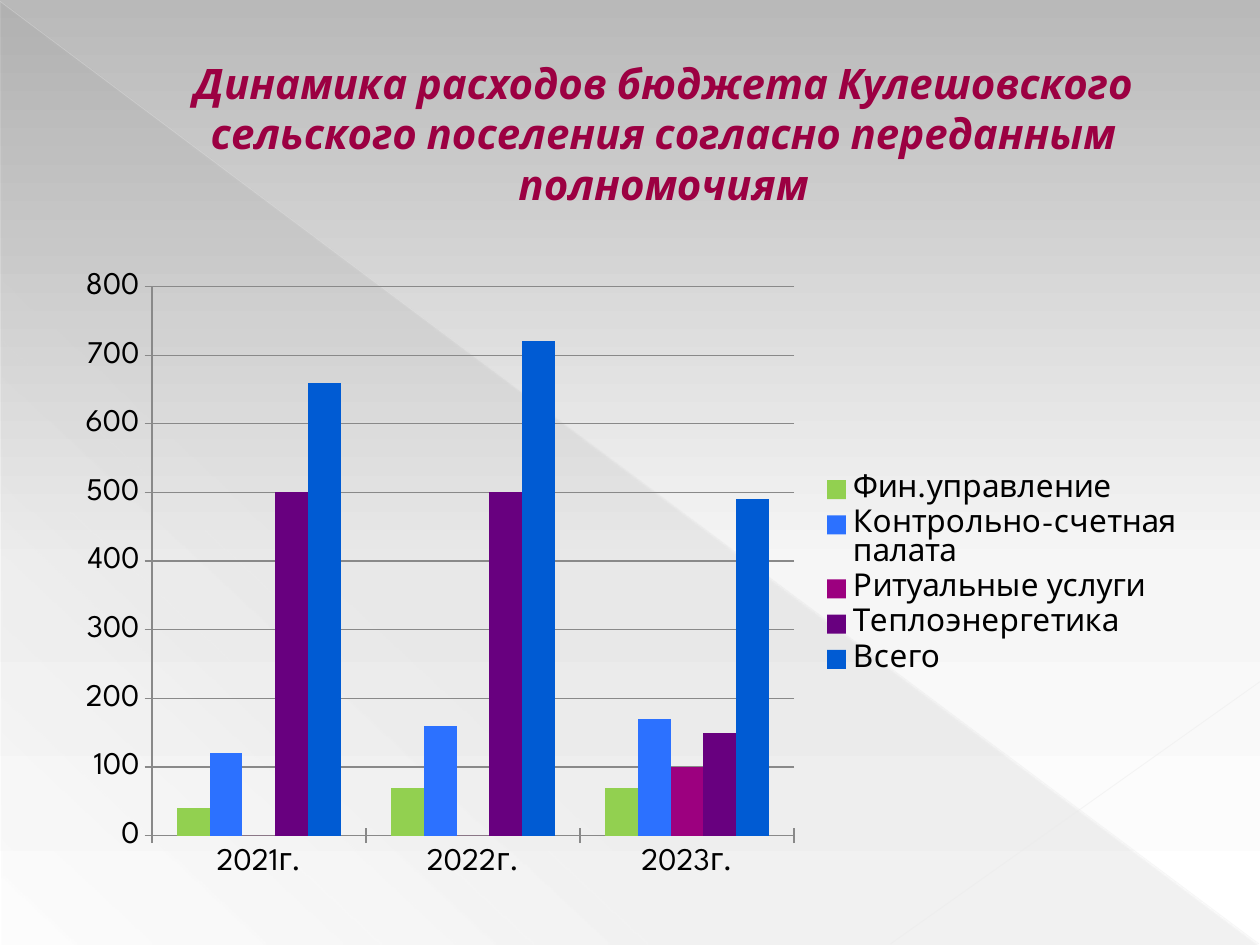
from lxml import etree
from pptx import Presentation
from pptx.chart import data as chart_data
from pptx.dml.color import RGBColor
from pptx.enum import chart as charts, shapes, text
from pptx.oxml import parse_xml
from pptx.oxml.ns import nsdecls, qn
from pptx.util import Inches, Pt

YEARS = ["2021г.", "2022г.", "2023г."]
EXPENSES = [
    ("Фин.управление", [40, 70, 70], "92D050"),
    ("Контрольно-счетная палата", [120, 160, 170], "2C71FF"),
    ("Ритуальные услуги", [0, 0, 100], "9C007F"),
    ("Теплоэнергетика", [500, 500, 150], "68007F"),
    ("Всего", [660, 720, 490], "005BD3"),
]


def color(value):
    return RGBColor.from_string(value)


def color_xml(value, opacity=100):
    return f'<a:srgbClr val="{value}"><a:alpha val="{opacity * 1000}"/></a:srgbClr>'


def set_gradient(fill, stops, angle):
    """Fill with (position, colour, opacity) stops along an angle in degrees."""
    fill.gradient()
    fill.gradient_angle = 0
    gradient = fill._fill._gradFill
    for child in list(gradient):
        gradient.remove(child)
    stop_xml = "".join(
        f'<a:gs pos="{position * 1000}">{color_xml(value, opacity)}</a:gs>'
        for position, value, opacity in stops)
    gradient.append(parse_xml(f'<a:gsLst {nsdecls("a")}>{stop_xml}</a:gsLst>'))
    gradient.append(parse_xml(
        f'<a:lin {nsdecls("a")} ang="{angle * 60000}" scaled="0"/>'))


def add_triangle(page):
    triangle = page.shapes.add_shape(
        shapes.MSO_SHAPE.RIGHT_TRIANGLE,
        Inches(0.01), Inches(0.02), Inches(9.98), Inches(7.48))
    triangle.shadow.inherit = False
    triangle.line.fill.background()
    set_gradient(triangle.fill, [(0, "666666", 10), (70, "666666", 8),
                                 (100, "666666", 1)], 133)


def add_line(page, start, end, value, width, opacity):
    line = page.shapes.add_connector(
        shapes.MSO_CONNECTOR.STRAIGHT, *map(Inches, start + end))
    line.line.width = Pt(width)
    line.line.color.rgb = color(value)
    solid = line.line.fill._xPr.find(qn("a:solidFill"))
    alpha = etree.SubElement(solid[0], qn("a:alpha"))
    alpha.set("val", str(opacity * 1000))
    etree.SubElement(line._element.spPr, qn("a:effectLst"))


def add_title(page, words):
    box = page.shapes.add_textbox(Inches(0.5), Inches(0.29), Inches(9), Inches(1.53))
    frame = box.text_frame
    frame.word_wrap = True
    frame.vertical_anchor = text.MSO_ANCHOR.MIDDLE
    para = frame.paragraphs[0]
    para.alignment = text.PP_ALIGN.CENTER
    para._p.get_or_add_pPr().set("marL", str(Inches(0.53)))
    span = para.add_run()
    span.text = words
    font = span.font
    font.name, font.size = "Karla", Pt(24)
    font.bold = font.italic = True
    font.color.rgb = color("9C0042")
    # Thin outline around the letters
    span._r.get_or_add_rPr().insert(0, parse_xml(
        f'<a:ln {nsdecls("a")} w="{Pt(0.5)}"><a:solidFill>'
        f'{color_xml("B12761")}</a:solidFill></a:ln>'))


def style_axis(axis):
    axis.major_tick_mark = charts.XL_TICK_MARK.CROSS
    axis.minor_tick_mark = charts.XL_TICK_MARK.NONE
    axis.format.line.color.rgb = color("898989")
    axis.format.line.width = Pt(0.75)


def add_expense_chart(page):
    values = chart_data.CategoryChartData()
    values.categories = YEARS
    for name, amounts, _ in EXPENSES:
        values.add_series(name, amounts)
    chart = page.shapes.add_chart(
        charts.XL_CHART_TYPE.COLUMN_CLUSTERED,
        Inches(0.5), Inches(2.06), Inches(9), Inches(5), values).chart
    chart.has_title = False
    chart.font.name, chart.font.size = "League Spartan", Pt(18)
    chart.font.color.rgb = color("000000")

    # Columns
    plot = chart.plots[0]
    plot.vary_by_categories = False
    plot.gap_width, plot.overlap = 150, 0
    for series, (_, _, value) in zip(plot.series, EXPENSES):
        series.format.fill.solid()
        series.format.fill.fore_color.rgb = color(value)

    # Axes and legend
    style_axis(chart.category_axis)
    amounts_axis = chart.value_axis
    style_axis(amounts_axis)
    amounts_axis.minimum_scale, amounts_axis.maximum_scale = 0, 800
    amounts_axis.major_unit = 100
    amounts_axis.has_major_gridlines = True
    grid = amounts_axis.major_gridlines.format.line
    grid.color.rgb, grid.width = color("898989"), Pt(0.75)
    chart.has_legend = True
    chart.legend.position = charts.XL_LEGEND_POSITION.RIGHT
    chart.legend.include_in_layout = False


def main():
    deck = Presentation()
    deck.slide_width, deck.slide_height = Inches(10), Inches(7.5)
    page = deck.slides.add_slide(deck.slide_layouts[6])

    # Backdrop
    set_gradient(page.background.fill, [(0, "B9B9B9", 100), (60, "F6F6F6", 100),
                                        (100, "FFFFFF", 100)], 90)
    add_triangle(page)
    add_line(page, (0, 0.01), (9.99, 7.49), "E8E8E8", 0.39, 35)
    add_line(page, (10, 5.41), (7.07, 7.49), "EAEAEA", 0.47, 45)

    # Content
    add_title(page, "Динамика расходов бюджета Кулешовского сельского "
                    "поселения согласно переданным полномочиям")
    add_expense_chart(page)
    deck.save("out.pptx")


if __name__ == "__main__":
    main()
